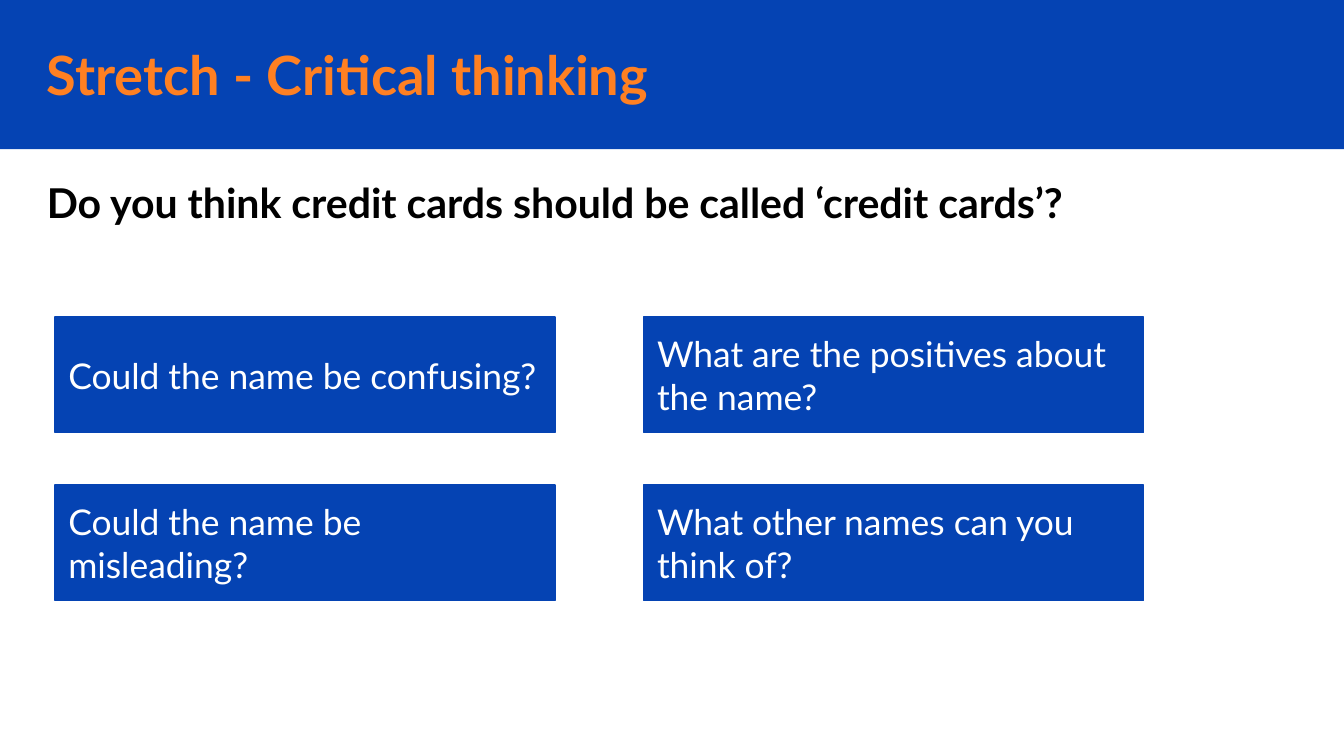
from dataclasses import dataclass

from pptx import Presentation
from pptx.dml.color import RGBColor as RGB
from pptx.enum.shapes import MSO_SHAPE as Shape
from pptx.enum.text import MSO_ANCHOR as Anchor, PP_ALIGN as Align
from pptx.util import Inches, Pt


@dataclass(frozen=True)
class Theme:
    """Colours, font and type sizes of the slide."""
    blue: RGB = RGB(0x05, 0x43, 0xB3)
    orange: RGB = RGB(0xFF, 0x80, 0x22)
    black: RGB = RGB(0, 0, 0)
    white: RGB = RGB(0xFF, 0xFF, 0xFF)
    font: str = "Lato"
    title: int = 29
    lead: int = 22
    body: int = 19
    inset: float = 0.1
    line: float = 0.75


THEME = Theme()
PROMPTS = [
    ["Could the name be confusing?", "What are the positives about the name?"],
    ["Could the name be misleading?", "What other names can you think of?"],
]


def write(shape, text, size, color, bold=False, anchor=Anchor.MIDDLE):
    """Fill a shape with one left-aligned paragraph."""
    frame = shape.text_frame
    frame.word_wrap = True
    frame.vertical_anchor = anchor
    frame.margin_left = frame.margin_right = Inches(THEME.inset)
    frame.margin_top = frame.margin_bottom = Inches(THEME.inset)
    para = frame.paragraphs[0]
    para.text = text
    para.alignment = Align.LEFT
    font = para.font
    font.name, font.size, font.bold = THEME.font, Pt(size), bold
    font.color.rgb = color


def add_label(slide, box, text, size, color, anchor=Anchor.MIDDLE):
    """Add a bold text box."""
    label = slide.shapes.add_textbox(*map(Inches, box))
    write(label, text, size, color, True, anchor)


def add_block(slide, box):
    """Add a plain blue rectangle."""
    block = slide.shapes.add_shape(Shape.RECTANGLE, *map(Inches, box))
    block.shadow.inherit = False
    block.fill.solid()
    block.fill.fore_color.rgb = THEME.blue
    block.line.fill.background()
    return block


def add_header(slide, box, text):
    """Draw the title band."""
    left, top, width, height = box
    add_block(slide, box)
    place = (left + 0.25, top + 0.27, width - 1.54, height - 0.55)
    add_label(slide, place, text, THEME.title, THEME.orange)


def add_prompts(slide, box, rows):
    """Spread the prompt cards over a grid that fills the box."""
    left, top, width, height = box
    wide, high = 3.72, 0.86
    across = (width - wide) / (len(rows[0]) - 1)
    down = (height - high) / (len(rows) - 1)
    for row, texts in enumerate(rows):
        for col, text in enumerate(texts):
            place = (left + col * across, top + row * down, wide, high)
            card = add_block(slide, place)
            card.line.color.rgb = THEME.blue
            card.line.width = Pt(THEME.line)
            write(card, text, THEME.body, THEME.white)


def main():
    """Build and save the slide."""
    deck = Presentation()
    deck.slide_width = Inches(10)
    deck.slide_height = deck.slide_width * 9 // 16
    slide = deck.slides.add_slide(deck.slide_layouts[6])
    add_header(slide, (0, 0, 10, 1.11), "Stretch - Critical thinking")
    add_label(slide, (0.25, 1.22, 8.19, 0.57),
              "Do you think credit cards should be called ‘credit cards’?",
              THEME.lead, THEME.black, Anchor.TOP)
    add_prompts(slide, (0.41, 2.36, 8.1, 2.11), PROMPTS)
    deck.save("out.pptx")


if __name__ == "__main__":
    main()
